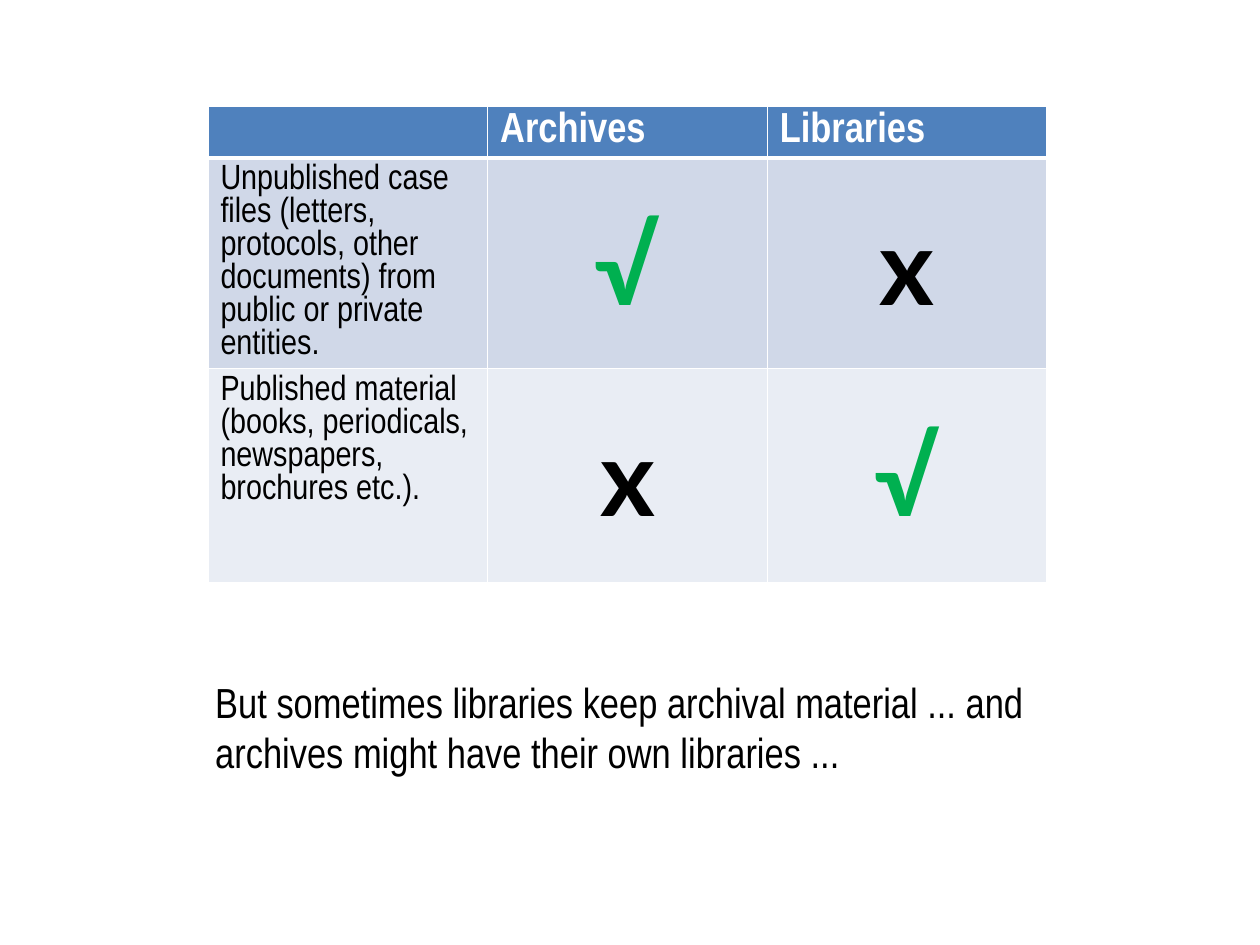
from dataclasses import dataclass

import pptx
import pptx.dml.color
import pptx.enum.text
import pptx.oxml.ns
import pptx.util
from lxml import etree

Inches = pptx.util.Inches
Pt = pptx.util.Pt
RGBColor = pptx.dml.color.RGBColor
ALIGN = pptx.enum.text.PP_ALIGN

WHITE = RGBColor(0xFF, 0xFF, 0xFF)
BLACK = RGBColor(0, 0, 0)
GREEN = RGBColor(0x00, 0xB0, 0x50)
HEADER_BLUE = RGBColor(0x4F, 0x81, 0xBD)
BAND_DARK = RGBColor(0xD0, 0xD8, 0xE8)
BAND_LIGHT = RGBColor(0xE9, 0xED, 0xF4)

COLUMN_WIDTH = 2.22
CHECK, CROSS = "√", "x"


@dataclass
class Row:
    height: float
    fill: RGBColor
    texts: tuple[str, str, str]
    top_line: float = 1
    bottom_line: float = 1


ROWS = [
    Row(0.41, HEADER_BLUE, ("", "Archives", "Libraries"), bottom_line=3),
    Row(1.67, BAND_DARK,
        ("Unpublished case files (letters, protocols, other documents) "
         "from public or private entities.", CHECK, CROSS), top_line=3),
    Row(1.7, BAND_LIGHT,
        ("Published material (books, periodicals, newspapers, brochures etc.).",
         CROSS, CHECK)),
]


def write(frame, text: str, *, size: float, font: str = "Arial Narrow",
          color: RGBColor = BLACK, bold: bool = False, align=ALIGN.LEFT) -> None:
    para = frame.paragraphs[0]
    para.alignment = align
    para.font.name = font
    para.font.size = Pt(size)
    if not text:
        return
    span = para.add_run()
    span.text = text
    span.font.name = font
    span.font.size = Pt(size)
    span.font.bold = bold
    span.font.color.rgb = color


def add_borders(cell, row: Row) -> None:
    properties = cell._tc.get_or_add_tcPr()
    qn = pptx.oxml.ns.qn
    widths = {"L": 1, "R": 1, "T": row.top_line, "B": row.bottom_line}
    for side, width in widths.items():
        line = etree.SubElement(properties, qn(f"a:ln{side}"), w=str(Pt(width)))
        fill = etree.SubElement(line, qn("a:solidFill"))
        etree.SubElement(fill, qn("a:srgbClr"), val=str(WHITE))


def fill_cell(cell, row: Row, text: str) -> None:
    add_borders(cell, row)
    cell.fill.solid()
    cell.fill.fore_color.rgb = row.fill
    if text in (CHECK, CROSS):
        cell.margin_top = Inches(0.35)
        write(cell.text_frame, text, size=60, font="Lato", bold=True,
              color=GREEN if text == CHECK else BLACK, align=ALIGN.CENTER)
    elif row.fill == HEADER_BLUE:
        write(cell.text_frame, text, size=24 if text else 16, color=WHITE, bold=True)
    else:
        write(cell.text_frame, text, size=20)


def add_comparison(page) -> None:
    height = sum(row.height for row in ROWS)
    table = page.shapes.add_table(
        len(ROWS), 3, Inches(1.65), Inches(0.84),
        Inches(3 * COLUMN_WIDTH), Inches(height)).table
    for column in table.columns:
        column.width = Inches(COLUMN_WIDTH)
    for row_index, row in enumerate(ROWS):
        table.rows[row_index].height = Inches(row.height)
        for column_index, text in enumerate(row.texts):
            fill_cell(table.cell(row_index, column_index), row, text)


def add_remark(page) -> None:
    box = page.shapes.add_textbox(Inches(1.61), Inches(5.32), Inches(6.61), Inches(0.91))
    box.text_frame.word_wrap = True
    box.text_frame.auto_size = pptx.enum.text.MSO_AUTO_SIZE.SHAPE_TO_FIT_TEXT
    write(box.text_frame, "But sometimes libraries keep archival material ... "
          "and archives might have their own libraries ...", size=24)


def main() -> None:
    deck = pptx.Presentation()
    deck.slide_width, deck.slide_height = Inches(10), Inches(7.5)
    page = deck.slides.add_slide(deck.slide_layouts[6])
    add_comparison(page)
    add_remark(page)
    deck.save("out.pptx")


if __name__ == "__main__":
    main()
